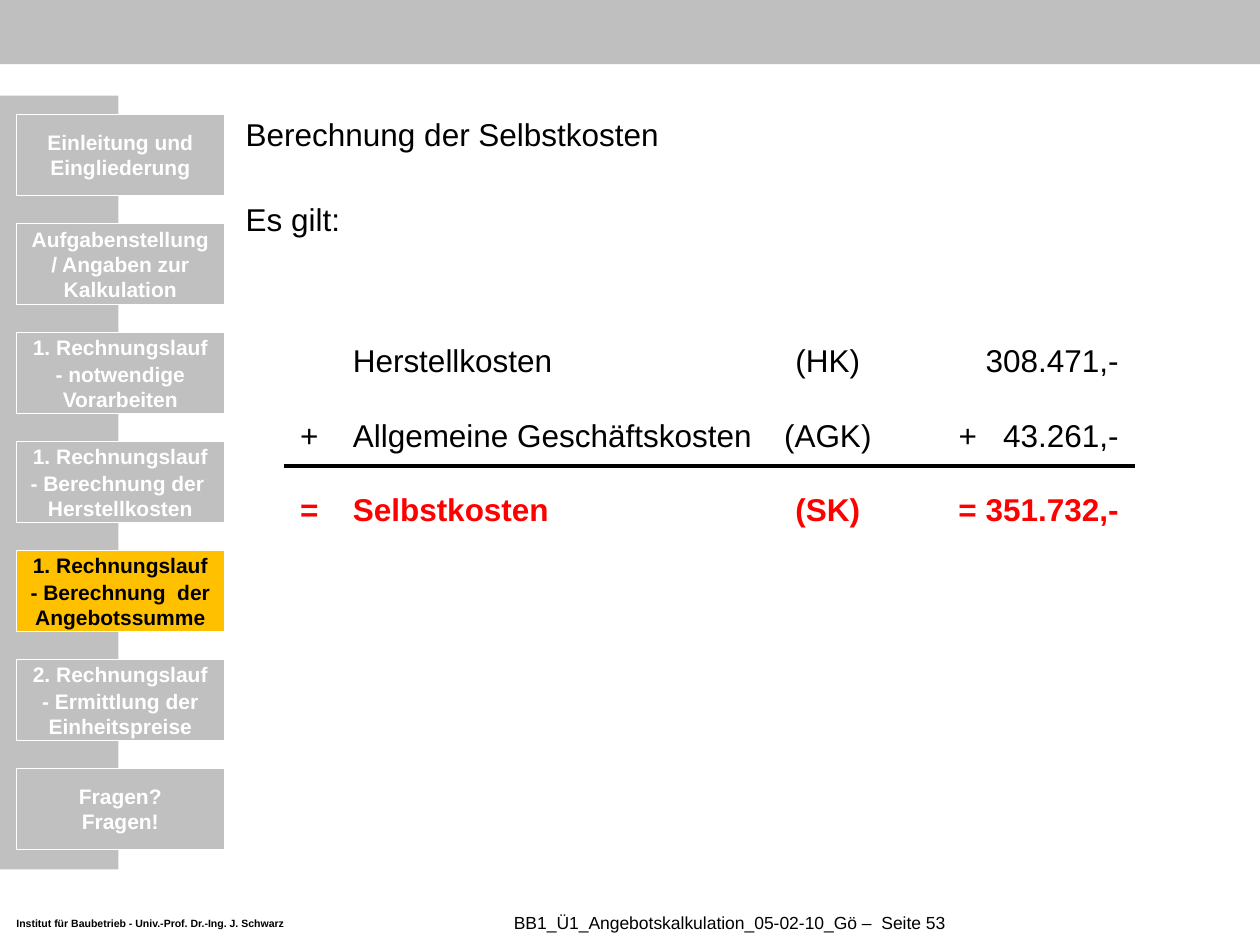
from pptx import Presentation
from pptx.dml.color import RGBColor
from pptx.enum.shapes import MSO_CONNECTOR, MSO_SHAPE
from pptx.enum.text import MSO_ANCHOR, MSO_AUTO_SIZE, PP_ALIGN
from pptx.oxml.ns import qn
from pptx.util import Inches, Pt
from lxml.etree import SubElement

# Content
TITLE = "Berechnung der Selbstkosten"
INTRO = "Es gilt:"
CHAPTERS = [
    "Einleitung und Eingliederung",
    "Aufgabenstellung / Angaben zur Kalkulation",
    "1. Rechnungslauf\n- notwendige Vorarbeiten",
    "1. Rechnungslauf\n- Berechnung der  Herstellkosten",
    "1. Rechnungslauf\n- Berechnung  der Angebotssumme",
    "2. Rechnungslauf\n- Ermittlung der Einheitspreise",
    "Fragen?\vFragen!",
]
ACTIVE = 4
COSTS = [  # sign, label, abbreviation, amount
    ("", "Herstellkosten", "(HK)", "308.471,-"),
    ("+", "Allgemeine Geschäftskosten", "(AGK)", "+   43.261,-"),
    ("=", "Selbstkosten", "(SK)", "= 351.732,-"),
]
INSTITUTE = "Institut für Baubetrieb - Univ.-Prof. Dr.-Ing. J. Schwarz"
PAGE = "BB1_Ü1_Angebotskalkulation_05-02-10_Gö –  Seite 53"

# Theme
THEME = {
    "font": "Arial",
    "text": "000000", "inverse": "FFFFFF", "result": "FF0000",
    "header": "BFBFBF", "panel": "C0C0C0", "active": "FFC000",
    "body": 18, "nav": 12, "page": 10, "institute": 6,
}

# Layout in inches
NAV_TOP, NAV_STEP = 0.91, 0.865
ROW_TOP, ROW_STEP, ROW_H = 2.67, 0.59, 0.38
COLUMNS = [  # left, width, alignment
    (2.34, 0.23, PP_ALIGN.CENTER),
    (2.76, 3.28, PP_ALIGN.LEFT),
    (6.18, 0.78, PP_ALIGN.CENTER),
    (7.56, 1.36, PP_ALIGN.RIGHT),
]


def rgb(name):
    return RGBColor.from_string(THEME[name])


def write(sp, text, size, color="text", bold=False, align=PP_ALIGN.LEFT,
          anchor=MSO_ANCHOR.MIDDLE, inset=(0.1, 0.05), wrap=True, before=0):
    tf = sp.text_frame
    tf.text = text
    tf.auto_size = MSO_AUTO_SIZE.NONE
    tf.word_wrap = wrap
    tf.vertical_anchor = anchor
    tf.margin_left = tf.margin_right = Inches(inset[0])
    tf.margin_top = tf.margin_bottom = Inches(inset[1])
    for i, p in enumerate(tf.paragraphs):
        p.alignment = align
        p.space_before = Pt(before if i else 0)
        for r in p.runs:
            r.font.name = THEME["font"]
            r.font.size = Pt(THEME[size])
            r.font.bold = bold
            r.font.color.rgb = rgb(color)
    return tf


def add_box(slide, box, fill, outlined=False):
    sp = slide.shapes.add_shape(MSO_SHAPE.RECTANGLE, *map(Inches, box))
    sp.shadow.inherit = False
    sp.fill.solid()
    sp.fill.fore_color.rgb = rgb(fill)
    if outlined:
        sp.line.color.rgb = rgb("inverse")
        sp.line.width = Pt(0.75)
    else:
        sp.line.fill.background()
    return sp


def add_text(slide, box, text, size, **style):
    return write(slide.shapes.add_textbox(*map(Inches, box)), text, size, **style)


def fill_placeholder(sp, box, text):
    sp.left, sp.top, sp.width, sp.height = map(Inches, box)
    p = write(sp, text, "body", anchor=MSO_ANCHOR.TOP).paragraphs[0]
    pPr = p._p.get_or_add_pPr()
    pPr.set("marL", "0")
    pPr.set("indent", "0")
    SubElement(pPr, qn("a:buNone"))
    p.line_spacing = Pt(27)


def main():
    prs = Presentation()
    prs.slide_width, prs.slide_height = Inches(10), Inches(7.5)
    slide = prs.slides.add_slide(prs.slide_layouts[1])

    # Header bar, side panel and footer
    add_box(slide, (0, 0, 10, 0.51), "header")
    add_box(slide, (0, 0.76, 0.94, 6.14), "panel")
    add_text(slide, (0.13, 7.28, 2.15, 0.1), INSTITUTE, "institute",
             bold=True, inset=(0, 0), wrap=False)
    add_text(slide, (2.76, 7.17, 6.06, 0.31), PAGE, "page",
             align=PP_ALIGN.CENTER, inset=(0.1, 0))

    # Title and introduction
    fill_placeholder(slide.shapes.title, (1.85, 0.79, 8.11, 0.5), TITLE)
    fill_placeholder(slide.placeholders[1], (1.85, 1.46, 8.11, 0.49), INTRO)

    # Chapter navigation
    for i, chapter in enumerate(CHAPTERS):
        active = i == ACTIVE
        sp = add_box(slide, (0.13, NAV_TOP + i * NAV_STEP, 1.65, 0.64),
                     "active" if active else "panel", outlined=True)
        write(sp, chapter, "nav", "text" if active else "inverse", bold=True,
              align=PP_ALIGN.CENTER, before=1)

    # Cost calculation, with the result in the last row
    for i, row in enumerate(COSTS):
        result = i == len(COSTS) - 1
        for text, (left, width, align) in zip(row, COLUMNS):
            if text:
                add_text(slide, (left, ROW_TOP + i * ROW_STEP, width, ROW_H),
                         text, "body", color="result" if result else "text",
                         bold=result, align=align, inset=(0.04, 0.04), wrap=False)

    # Sum line
    line = slide.shapes.add_connector(
        MSO_CONNECTOR.STRAIGHT, Inches(2.25), Inches(3.7), Inches(9.01), Inches(3.7))
    line.line.color.rgb = rgb("text")
    line.line.width = Pt(2)
    SubElement(line._element.spPr, qn("a:effectLst"))

    prs.save("out.pptx")


if __name__ == "__main__":
    main()
